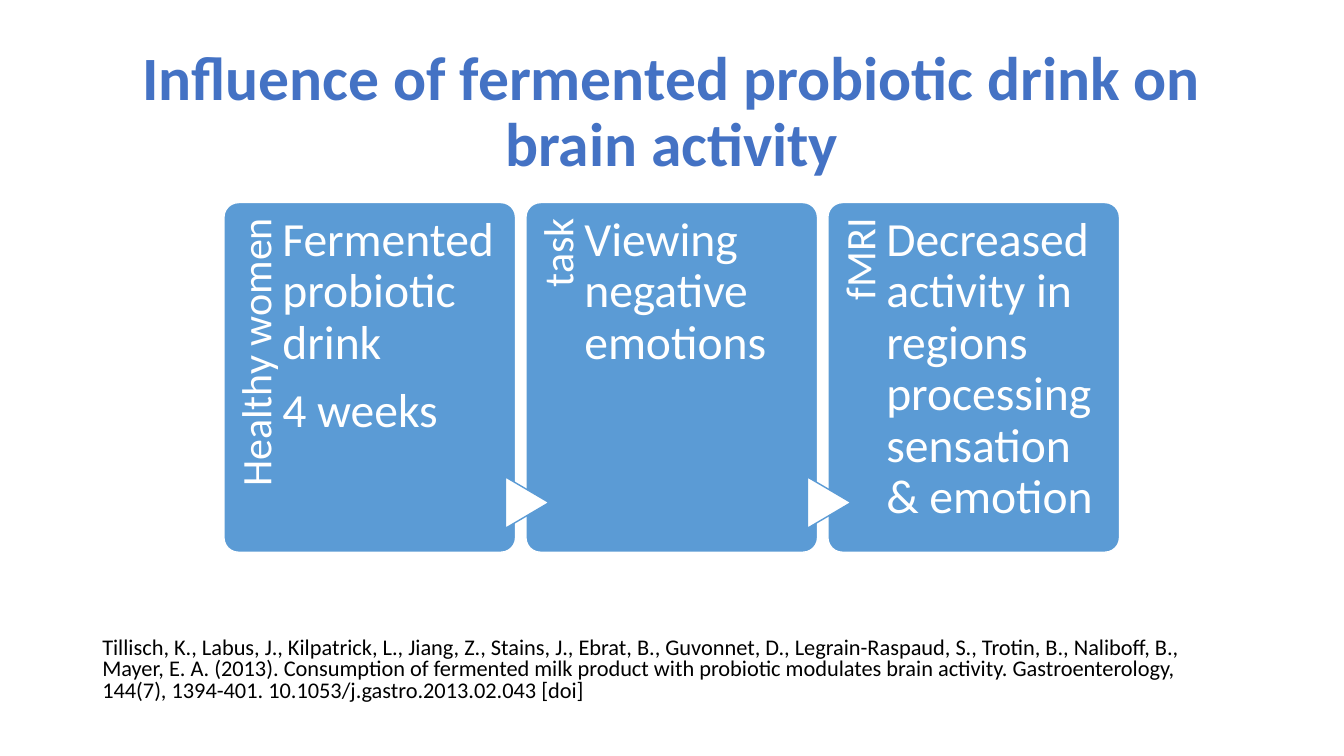
from pptx import Presentation
from pptx.dml.color import RGBColor
from pptx.enum.shapes import MSO_SHAPE
from pptx.enum.text import MSO_ANCHOR, PP_ALIGN
from pptx.util import Pt

WHITE = RGBColor(0xFF, 0xFF, 0xFF)
BLACK = RGBColor(0, 0, 0)
TITLE_BLUE = RGBColor(0x44, 0x72, 0xC4)
CARD_BLUE = RGBColor(0x5B, 0x9B, 0xD5)

TITLE = "Influence of fermented probiotic drink on brain activity"
CITATION = (
    "Tillisch, K., Labus, J., Kilpatrick, L., Jiang, Z., Stains, J., Ebrat, B., "
    "Guvonnet, D., Legrain-Raspaud, S., Trotin, B., Naliboff, B., Mayer, E. A. (2013). "
    "Consumption of fermented milk product with probiotic modulates brain activity. "
    "Gastroenterology, 144(7), 1394-401. 10.1053/j.gastro.2013.02.043 [doi]"
)
STEPS = [
    ("Healthy women", ["Fermented probiotic drink", "4 weeks"]),
    ("task", ["Viewing negative emotions"]),
    ("fMRI", ["Decreased activity in regions processing sensation & emotion"]),
]
FIRST_LEFT, STEP_PITCH = 160, 215.7
CARD_TOP, CARD_WIDTH, CARD_HEIGHT = 144.7, 208.3, 249.8


class SlideBuilder:
    font = "Calibri"

    def __init__(self, slide):
        self.s = slide

    def text(self, box, paragraphs, size, color, bold=False, align=PP_ALIGN.LEFT,
             anchor=MSO_ANCHOR.TOP, spacing=0.9, after=0,
             insets=(7.2, 3.6, 7.2, 3.6), rotation=0):
        sp = self.s.shapes.add_textbox(*map(Pt, box))
        sp.rotation = rotation
        tf = sp.text_frame
        tf.word_wrap = True
        tf.vertical_anchor = anchor
        tf.margin_left, tf.margin_top, tf.margin_right, tf.margin_bottom = map(Pt, insets)
        for i, content in enumerate(paragraphs):
            p = tf.add_paragraph() if i else tf.paragraphs[0]
            p.alignment = align
            p.line_spacing = spacing
            p.space_after = Pt(after)
            r = p.add_run()
            r.text = content
            r.font.name = self.font
            r.font.size = Pt(size)
            r.font.bold = bold
            r.font.color.rgb = color

    def shape(self, kind, box, fill, line, rotation=0):
        sp = self.s.shapes.add_shape(kind, *map(Pt, box))
        sp.shadow.inherit = False
        sp.rotation = rotation
        sp.fill.solid()
        sp.fill.fore_color.rgb = fill
        sp.line.color.rgb = line
        sp.line.width = Pt(1)
        return sp

    def card(self, left):
        sp = self.shape(MSO_SHAPE.ROUNDED_RECTANGLE,
                        (left, CARD_TOP, CARD_WIDTH, CARD_HEIGHT), CARD_BLUE, WHITE)
        sp.adjustments[0] = 0.05

    def label(self, left, content):
        self.text((left - 81.7, 226.5, 205, 41.7), [content], 30, WHITE,
                  align=PP_ALIGN.RIGHT, insets=(0, 8, 10.8, 0), rotation=270)

    def arrow(self, left):
        self.shape(MSO_SHAPE.FLOWCHART_EXTRACT, (left - 17.4, 343.4, 36.7, 31.2),
                   WHITE, CARD_BLUE, rotation=90)

    def body(self, left, paragraphs):
        self.text((left + 41.7, CARD_TOP, 155.2, CARD_HEIGHT), paragraphs, 34, WHITE,
                  after=12, insets=(0, 9.2, 0, 0))


def main():
    prs = Presentation()
    prs.slide_width, prs.slide_height = Pt(960), Pt(540)
    s = SlideBuilder(prs.slides.add_slide(prs.slide_layouts[6]))
    s.text((66, 28.8, 828, 104.4), [TITLE], 44, TITLE_BLUE, bold=True,
           align=PP_ALIGN.CENTER, anchor=MSO_ANCHOR.MIDDLE)
    s.text((66, 452.2, 828, 60), [CITATION], 16, BLACK, spacing=0.8)
    for i, (label, paragraphs) in enumerate(STEPS):
        left = FIRST_LEFT + i * STEP_PITCH
        s.card(left)
        s.label(left, label)
        if i:
            s.arrow(left)
        s.body(left, paragraphs)
    prs.save("out.pptx")


if __name__ == "__main__":
    main()
